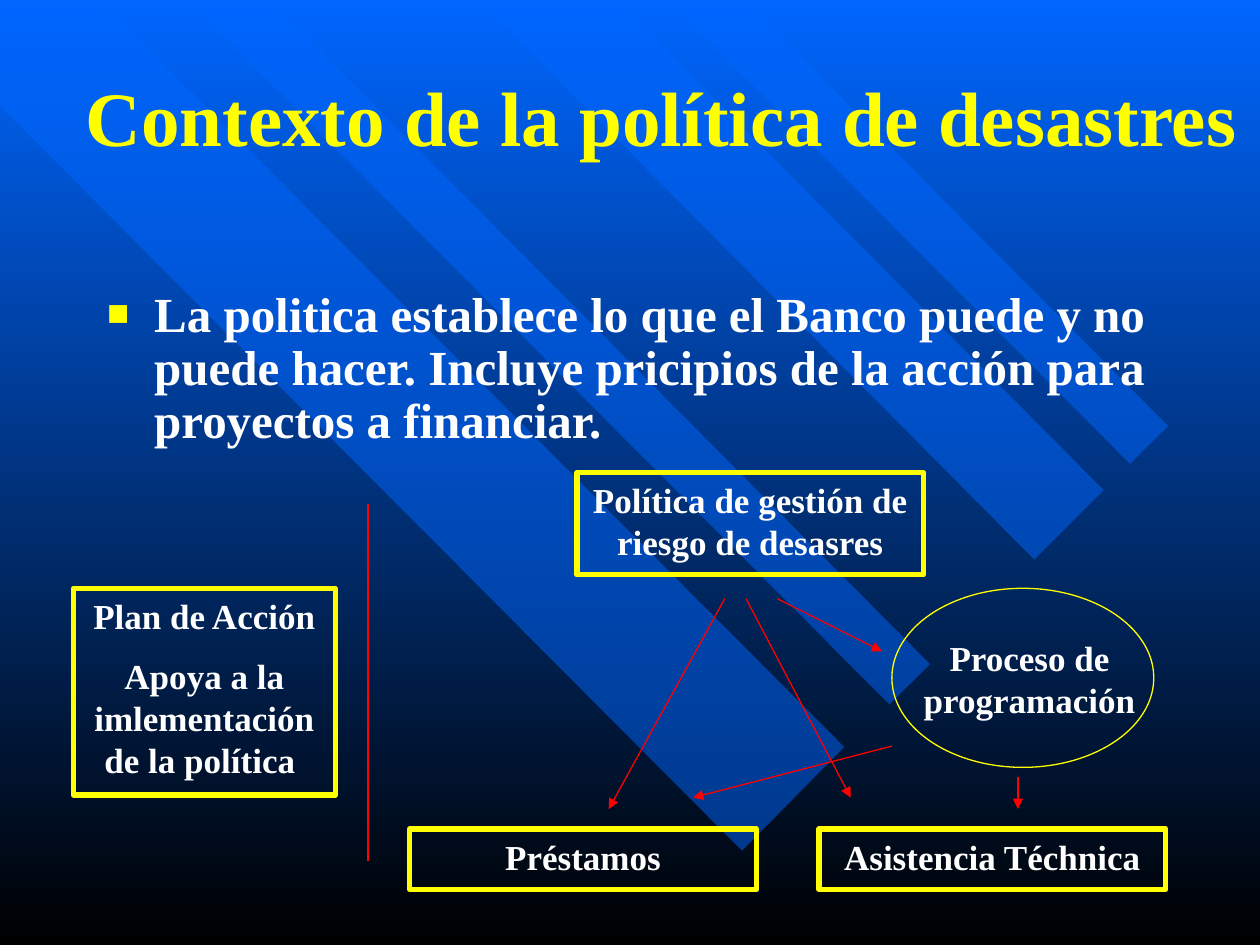
from lxml import etree
from pptx import Presentation
from pptx.dml.color import RGBColor
from pptx.enum.shapes import MSO_CONNECTOR, MSO_SHAPE
from pptx.enum.text import MSO_ANCHOR, PP_ALIGN
from pptx.oxml.ns import qn
from pptx.util import Cm, Pt

BLUE = RGBColor(0x00, 0x66, 0xFF)
BLACK = RGBColor(0x00, 0x00, 0x00)
YELLOW = RGBColor(0xFF, 0xFF, 0x00)
WHITE = RGBColor(0xFF, 0xFF, 0xFF)
RED = RGBColor(0xFF, 0x00, 0x00)
STRAIGHT = MSO_CONNECTOR.STRAIGHT
RECTANGLE, OVAL = MSO_SHAPE.RECTANGLE, MSO_SHAPE.OVAL
LEFT, CENTER = PP_ALIGN.LEFT, PP_ALIGN.CENTER
TOP, MIDDLE = MSO_ANCHOR.TOP, MSO_ANCHOR.MIDDLE
FONT = "Times New Roman"

TITLE = "Contexto de la política de desastres"
STATEMENT = (
    "La politica establece lo que el Banco puede y no puede hacer. "
    "Incluye pricipios de la acción para proyectos a financiar."
)
BANDS = [
    [(17.02, 15.06), (2.01, 0), (0, 0), (0, 2.13), (14.96, 17.15)],
    [(5.44, 0), (18.75, 13.39), (17.93, 14.2), (3.78, 0)],
    [(12.42, 0), (22.25, 9.88), (20.85, 11.28), (9.65, 0)],
    [(13.46, 0), (22.78, 9.35), (23.55, 8.59), (15.01, 0)],
]
BOXES = [
    ((11.63, 9.53, 6.99, 2.06), ["Política de gestión de riesgo de desasres"]),
    ((1.48, 11.86, 5.28, 4.17),
     ["Plan de Acción", "Apoya a la imlementación de la política "]),
    ((8.26, 16.71, 6.99, 1.22), ["Préstamos"]),
    ((16.51, 16.71, 6.99, 1.22), ["Asistencia Téchnica"]),
]
PROCESS_OVAL = (17.98, 11.86, 5.28, 3.61)
PROCESS_LABEL = (17.58, 12.7, 6.35, 1.96)
ARROWS = [
    ((14.61, 12.07), (12.27, 16.31)),
    ((17.98, 15.04), (13.97, 16.08)),
    ((20.52, 15.67), (20.52, 16.31)),
    ((15.04, 12.07), (17.15, 16.08)),
    ((15.67, 12.07), (17.78, 13.13)),
]
DIVIDER = ((7.42, 10.16), (7.42, 17.35))


def lengths(values):
    return [Cm(value) for value in values]


def write(shape, texts, size, color=WHITE, align=CENTER, anchor=TOP):
    frame = shape.text_frame
    frame.word_wrap = True
    frame.vertical_anchor = anchor
    for index, text in enumerate(texts):
        para = frame.add_paragraph() if index else frame.paragraphs[0]
        para.text = text
        para.alignment = align
        if index:
            para.space_before = Pt(size / 2)
        para.font.name = FONT
        para.font.size = Pt(size)
        para.font.bold = True
        para.font.color.rgb = color
    return frame


def add_text(page, place, texts, size, **style):
    return write(page.shapes.add_textbox(*lengths(place)), texts, size, **style)


def add_outline(page, kind, place, width):
    shape = page.shapes.add_shape(kind, *lengths(place))
    shape.shadow.inherit = False
    shape.fill.background()
    shape.line.color.rgb = YELLOW
    shape.line.width = Pt(width)
    return shape


def add_band(page, corners):
    points = [lengths(corner) for corner in corners]
    builder = page.shapes.build_freeform(*points[0])
    builder.add_line_segments(points[1:], close=True)
    band = builder.convert_to_shape()
    band.shadow.inherit = False
    band.line.fill.background()
    band.fill.solid()
    band.fill.fore_color.rgb = BLUE
    color = band.fill._xPr.find(".//" + qn("a:srgbClr"))
    etree.SubElement(color, qn("a:alpha"), val="50000")


def add_line(page, start, end, arrow=True):
    line = page.shapes.add_connector(STRAIGHT, *lengths(start + end))
    line.line.color.rgb = RED
    line.line.width = Pt(0.75)
    if arrow:
        etree.SubElement(line.line._get_or_add_ln(), qn("a:tailEnd"), type="triangle")
    etree.SubElement(line._element.spPr, qn("a:effectLst"))


def add_bullet(para):
    properties = para._p.get_or_add_pPr()
    properties.set("marL", str(Cm(0.95)))
    properties.set("indent", str(-Cm(0.95)))
    color = etree.SubElement(properties, qn("a:buClr"))
    etree.SubElement(color, qn("a:srgbClr"), val=str(YELLOW))
    etree.SubElement(properties, qn("a:buSzPct"), val="75000")
    etree.SubElement(properties, qn("a:buFont"), typeface=FONT)
    etree.SubElement(properties, qn("a:buChar"), char="■")


def paint_background(page):
    fill = page.background.fill
    fill.gradient()
    fill.gradient_angle = 270
    for stop, position, color in zip(fill.gradient_stops, (0, 1), (BLUE, BLACK)):
        stop.position = position
        stop.color.rgb = color


def main():
    deck = Presentation()
    deck.slide_width, deck.slide_height = Cm(25.4), Cm(19.05)
    page = deck.slides.add_slide(deck.slide_layouts[6])
    paint_background(page)
    for corners in BANDS:
        add_band(page, corners)

    body = add_text(page, (1.91, 5.72, 21.79, 2.97), [STATEMENT], 28, align=LEFT)
    statement = body.paragraphs[0]
    statement.line_spacing = 0.9
    statement.font.size = Pt(28)
    add_bullet(statement)
    add_text(page, (0.64, 0.64, 25.4, 3.38), [TITLE], 44, color=YELLOW, anchor=MIDDLE)

    for place, texts in BOXES:
        write(add_outline(page, RECTANGLE, place, 3), texts, 20)
    add_outline(page, OVAL, PROCESS_OVAL, 0.75)
    add_text(page, PROCESS_LABEL, ["Proceso de programación"], 20)

    for start, end in ARROWS:
        add_line(page, start, end)
    add_line(page, *DIVIDER, arrow=False)
    deck.save("out.pptx")


if __name__ == "__main__":
    main()
